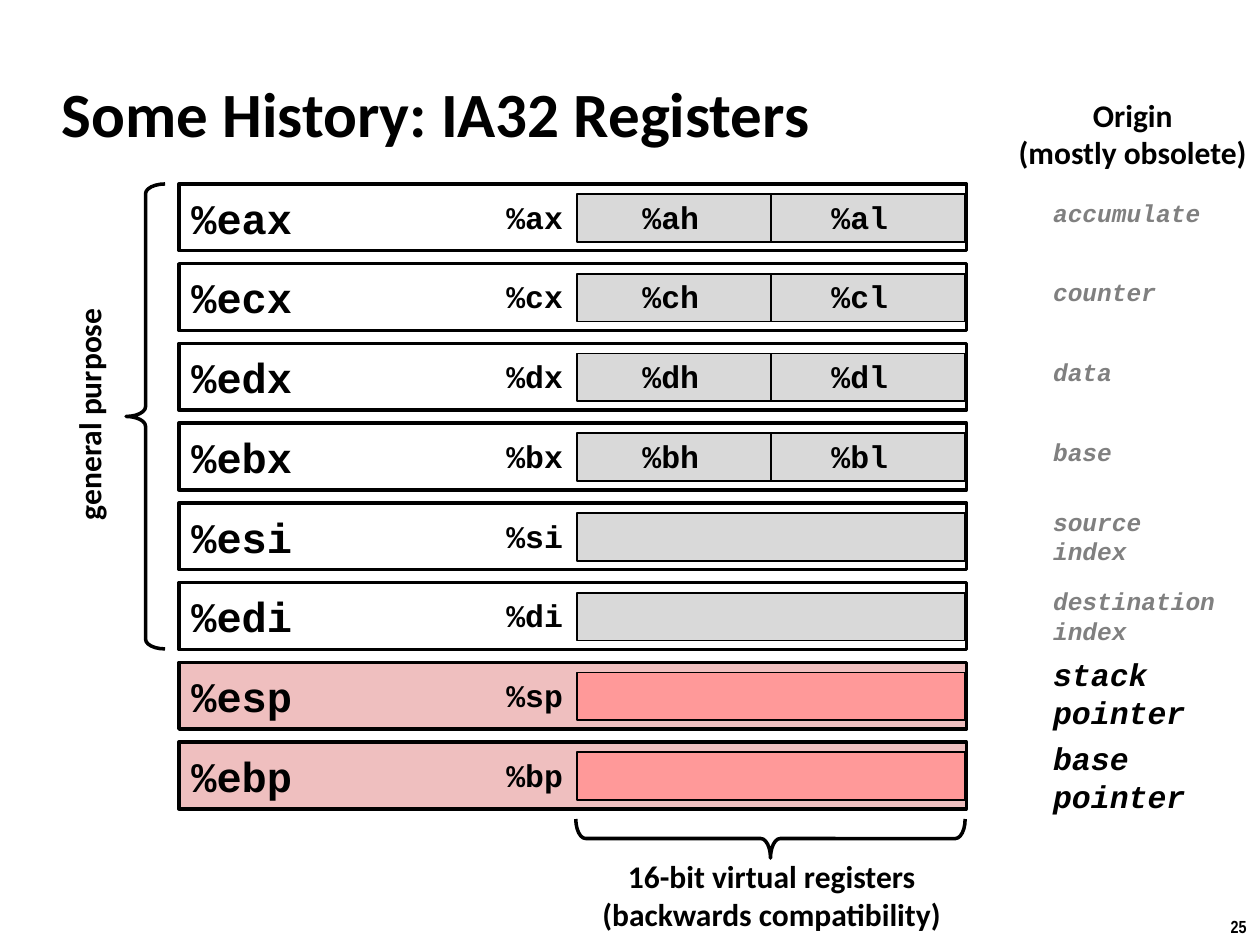
from lxml import etree
from pptx import Presentation
from pptx.dml.color import RGBColor
from pptx.enum import shapes, text
from pptx.oxml import ns
from pptx.util import Inches, Pt

BLACK = RGBColor(0x00, 0x00, 0x00)
WHITE = RGBColor(0xFF, 0xFF, 0xFF)
GRAY = RGBColor(0x80, 0x80, 0x80)
LIGHT_GRAY = RGBColor(0xD9, 0xD9, 0xD9)
PINK = RGBColor(0xEF, 0xBF, 0xBF)
RED = RGBColor(0xFF, 0x99, 0x99)
MONO, SANS = "Courier New", "Calibri"
LEFT, CENTER = text.PP_ALIGN.LEFT, text.PP_ALIGN.CENTER

prs = Presentation()
prs.slide_width, prs.slide_height = Inches(10), Inches(7.5)
s = prs.slides.add_slide(prs.slide_layouts[5])


def write(sp, lines, size, font=MONO, color=BLACK, align=LEFT, italic=False, wrap=False):
    tf = sp.text_frame
    tf.word_wrap = wrap
    tf.text = lines
    fmt = {"name": font, "size": Pt(size), "bold": True, "italic": italic}
    for p in tf.paragraphs:
        p.alignment = align
        for r in p.runs:
            r.font.color.rgb = color
            for key, value in fmt.items():
                setattr(r.font, key, value)
    return sp


def draw(kind, x, y, w, h, fill, weight):
    sp = s.shapes.add_shape(kind, Inches(x), Inches(y), Inches(w), Inches(h))
    sp.shadow.inherit = False
    if fill is None:
        sp.fill.background()
    else:
        sp.fill.solid()
        sp.fill.fore_color.rgb = fill
    sp.line.color.rgb = BLACK
    sp.line.width = Pt(weight)
    return sp


title = s.shapes.title
box = {"left": 0.39, "top": 0.48, "width": 8.3, "height": 0.83}
for key, value in box.items():
    setattr(title, key, Inches(value))
write(title, "Some History: IA32 Registers", 36, SANS, wrap=True)
title.text_frame.vertical_anchor = text.MSO_ANCHOR.MIDDLE

registers = [
    ("ax", "accumulate", 0.02),
    ("cx", "counter", 0.02),
    ("dx", "data", 0.02),
    ("bx", "base", 0.02),
    ("si", "source\nindex", 0.1),
    ("di", "destination\nindex", 0.1),
    ("sp", "stack\npointer", 0.19),
    ("bp", "base\npointer", 0.15),
]
PITCH = (5.89 - 1.46) / (len(registers) - 1)
RECT = shapes.MSO_SHAPE.RECTANGLE

for i, (name, origin, rise) in enumerate(registers):
    pointer = name in ("sp", "bp")
    halves = name.endswith("x")
    top = 1.46 + i * PITCH
    inner = top + 0.08

    sp = draw(RECT, 1.42, top, 6.25, 0.53, PINK if pointer else WHITE, 2)
    write(sp, "%e" + name, 24, wrap=True)
    sp.text_frame.vertical_anchor = text.MSO_ANCHOR.MIDDLE
    draw(RECT, 4.58, inner, 3.08, 0.38, RED if pointer else LIGHT_GRAY, 1)

    labels = [(3.92, name)]
    if halves:
        line = s.shapes.add_connector(
            shapes.MSO_CONNECTOR.STRAIGHT,
            Inches(6.12), Inches(inner), Inches(6.12), Inches(inner + 0.38))
        line.line.color.rgb = BLACK
        line.line.width = Pt(1)
        etree.SubElement(line._element.spPr, ns.qn("a:effectLst"))
        labels += [(5, name[0] + "h"), (6.5, name[0] + "l")]
    for x, label in labels:
        sp = s.shapes.add_textbox(Inches(x), Inches(inner - 0.02), Inches(0.65), Inches(0.4))
        write(sp, "%" + label, 18)

    size = 18 if pointer else 14
    rows = origin.split("\n")
    height = 0.1 + len(rows) * size / 60
    sp = s.shapes.add_textbox(Inches(8.26), Inches(inner - rise), Inches(1.6), Inches(height))
    write(sp, origin, size, color=BLACK if pointer else GRAY, italic=True, wrap=True)

braces = [(5.96, 5.11, 3.09, 90), (1, 1.46, 3.69, 180)]
for x, y, h, angle in braces:
    sp = draw(shapes.MSO_SHAPE.RIGHT_BRACE, x, y, 0.31, h, None, 2)
    sp.rotation = angle
    sp.adjustments[0], sp.adjustments[1] = 0.25, 0.5

captions = [
    ("16-bit virtual registers\n(backwards compatibility)", 4.67, 6.75, 2.91, 0.71, 18, SANS, 0),
    ("general purpose", -0.24, 3.08, 1.89, 0.4, 18, SANS, 270),
    ("Origin\n(mostly obsolete)", 7.98, 0.71, 2.02, 0.71, 18, SANS, 0),
    ("25", 9.66, 7.22, 0.34, 0.27, 10, "Arial Narrow", 0),
]
for words, x, y, w, h, size, font, angle in captions:
    sp = s.shapes.add_textbox(Inches(x), Inches(y), Inches(w), Inches(h))
    sp.rotation = angle
    write(sp, words, size, font, align=LEFT if angle else CENTER)

prs.save("out.pptx")
